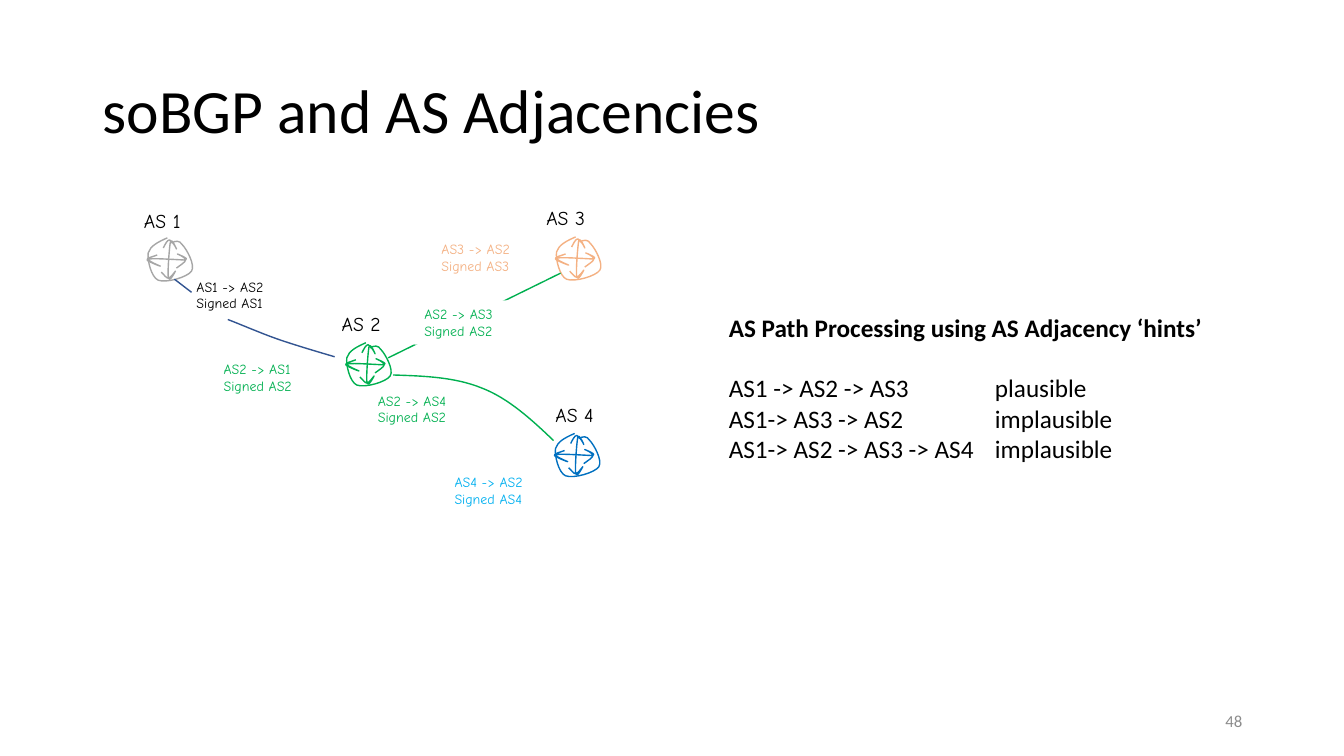
from dataclasses import dataclass
from typing import Optional

from lxml import etree
from pptx import Presentation
from pptx import util as u
from pptx.dml.color import RGBColor
from pptx.enum import shapes, text
from pptx.oxml.ns import qn

PX = 9144  # EMU per px, 100 px to the inch
SANS, HAND = "Calibri", "Comic Neue"
BLACK, WHITE, GREEN, NAVY = "000000", "FFFFFF", "00B050", "325491"

Point = tuple[int, int]


@dataclass
class Node:
    name: str
    at: Point
    tag: Point
    width: int
    color: str


@dataclass
class Claim:
    """Adjacency that one AS signs for another."""
    src: int
    dst: int
    at: Point
    color: str
    fill: Optional[str] = WHITE
    width: int = 113


@dataclass
class Link:
    points: list[Point]
    color: str


NODES = [
    Node("AS 1", (146, 236), (133, 202), 67, "A6A6A6"),
    Node("AS 2", (343, 340), (329, 305), 75, GREEN),
    Node("AS 3", (551, 235), (532, 199), 72, "F4B183"),
    Node("AS 4", (550, 430), (541, 395), 71, "0070C0"),
]
# Claims under and over the links
LOWER = [
    Claim(1, 2, (185, 271), BLACK, None, 110),
    Claim(2, 4, (365, 384), GREEN),
]
UPPER = [
    Claim(2, 1, (212, 353), GREEN, width=110),
    Claim(2, 3, (411, 298), GREEN),
    Claim(3, 2, (428, 234), "F4B183"),
    Claim(4, 2, (441, 465), "00B0F0"),
]
LINES = [
    Link([(173, 277), (190, 290)], NAVY),
    Link([(385, 355), (556, 271)], GREEN),
]
# Bezier chains: start, then two handles and an end per curve
CURVES = [
    Link([(226, 317), (244, 324), (262, 332), (280, 338),
          (298, 344), (315, 349), (332, 354)], NAVY),
    Link([(390, 372), (420, 373), (451, 374), (478, 385),
          (504, 395), (527, 416), (549, 437)], GREEN),
]
RING = [(20, 0), (11, 4), (3, 8), (1, 15), (0, 22), (4, 39), (11, 42),
        (19, 45), (40, 39), (44, 33), (48, 27), (39, 11), (35, 7),
        (32, 2), (28, 3), (24, 5)]
ACROSS = [(10, 17), (5, 19), (-1, 20), (0, 22), (0, 23), (12, 28), (13, 28),
          (13, 28), (-2, 22), (2, 21), (7, 20), (34, 22), (38, 22),
          (43, 21), (30, 16), (30, 16), (30, 16), (38, 19), (38, 22),
          (38, 24), (33, 27), (29, 30)]
UPDOWN = [(16, 10), (18, 6), (20, 2), (22, 2), (24, 2), (29, 10), (29, 11),
          (29, 11), (24, -1), (23, 4), (22, 9), (20, 35), (21, 40),
          (22, 45), (28, 33), (28, 33), (28, 33), (23, 40), (21, 40),
          (19, 40), (17, 37), (14, 34)]
PATHS = [
    ("AS1 -> AS2 -> AS3", "plausible"),
    ("AS1-> AS3 -> AS2", "implausible"),
    ("AS1-> AS2 -> AS3 -> AS4", "implausible"),
]


def rgb(code: str) -> RGBColor:
    return RGBColor.from_string(code)


def px(value: int) -> int:
    return value * PX


def add_run(para, words: str, size: int, color: str, face: str,
            bold: bool = False) -> None:
    run = para.add_run()
    run.text = words
    font = run.font
    font.size, font.name, font.bold = u.Pt(size), face, bold
    font.color.rgb = rgb(color)


def add_box(slide, at: Point, size: Point, wrap: bool = False):
    box = slide.shapes.add_textbox(*map(px, at + size))
    box.text_frame.word_wrap = wrap
    return box


def add_claim(slide, claim: Claim) -> None:
    box = add_box(slide, claim.at, (claim.width, 44))
    if claim.fill:
        box.fill.solid()
        box.fill.fore_color.rgb = rgb(claim.fill)
    frame = box.text_frame
    add_run(frame.paragraphs[0], f"AS{claim.src} -> AS{claim.dst}",
            10, claim.color, HAND)
    add_run(frame.add_paragraph(), f"Signed AS{claim.src}",
            10, claim.color, HAND)


def add_curve(parts, chain: list[Point], color: str,
              at: Point = (0, 0)) -> None:
    dots = [(px(x + at[0]), px(y + at[1])) for x, y in chain]
    ends = dots[::3]
    pen = parts.build_freeform(*ends[0])
    pen.add_line_segments(ends[1:], close=False)
    curve = pen.convert_to_shape()
    # Bend each straight piece with its two handles
    left, top = min(x for x, _ in ends), min(y for _, y in ends)
    for i, piece in enumerate(list(curve._element.iter(qn("a:lnTo")))):
        bend = etree.Element(qn("a:cubicBezTo"))
        for x, y in dots[3 * i + 1:3 * i + 4]:
            etree.SubElement(bend, qn("a:pt"), x=str(x - left),
                             y=str(y - top))
        piece.getparent().replace(piece, bend)
    curve.shadow.inherit = False
    curve.fill.background()
    curve.line.color.rgb = rgb(color)
    curve.line.width = u.Pt(1)


def add_line(slide, link: Link) -> None:
    start, end = link.points
    line = slide.shapes.add_connector(
        shapes.MSO_CONNECTOR.STRAIGHT, *map(px, start + end))
    line.line.color.rgb = rgb(link.color)
    line.line.width = u.Pt(1)
    etree.SubElement(line._element.spPr, qn("a:effectLst"))


def add_node(slide, node: Node) -> None:
    group = slide.shapes.add_group_shape()
    for chain in (RING, ACROSS, UPDOWN):
        add_curve(group.shapes, chain, node.color, node.at)
    tag = add_box(slide, node.tag, (node.width, 34))
    add_run(tag.text_frame.paragraphs[0], node.name, 14, BLACK, HAND)


def add_title(slide) -> None:
    title = slide.shapes.title
    title.left, title.top, title.width, title.height = map(
        px, (92, 40, 1150, 145))
    frame = title.text_frame
    frame.vertical_anchor = text.MSO_ANCHOR.MIDDLE
    para = frame.paragraphs[0]
    para.alignment, para.line_spacing = text.PP_ALIGN.LEFT, 0.9
    add_run(para, "soBGP and AS Adjacencies", 44, BLACK, SANS)


def add_paths(slide) -> None:
    frame = add_box(slide, (713, 305), (493, 192), True).text_frame
    add_run(frame.paragraphs[0],
            "AS Path Processing using AS Adjacency ‘hints’",
            18, BLACK, SANS, True)
    for i, (path, verdict) in enumerate(PATHS):
        para = frame.add_paragraph()
        if i == 0:
            para.space_before = u.Pt(21.5)
        tabs = etree.SubElement(para._p.get_or_add_pPr(), qn("a:tabLst"))
        etree.SubElement(tabs, qn("a:tab"), pos=str(px(264)), algn="l")
        add_run(para, f"{path}\t{verdict}", 18, BLACK, SANS)


def main() -> None:
    prs = Presentation()
    prs.slide_width, prs.slide_height = px(1333), px(750)
    slide = prs.slides.add_slide(prs.slide_layouts[5])
    add_title(slide)

    # Network
    for node in NODES:
        add_node(slide, node)
    for claim in LOWER:
        add_claim(slide, claim)
    for link in LINES:
        add_line(slide, link)
    for link in CURVES:
        add_curve(slide.shapes, link.points, link.color)
    for claim in UPPER:
        add_claim(slide, claim)

    # Path verdicts and page number
    add_paths(slide)
    page = add_box(slide, (942, 695), (300, 40), True).text_frame
    page.vertical_anchor = text.MSO_ANCHOR.MIDDLE
    page.paragraphs[0].alignment = text.PP_ALIGN.RIGHT
    add_run(page.paragraphs[0], "48", 12, "8C8C8C", SANS)
    prs.save("out.pptx")


if __name__ == "__main__":
    main()
